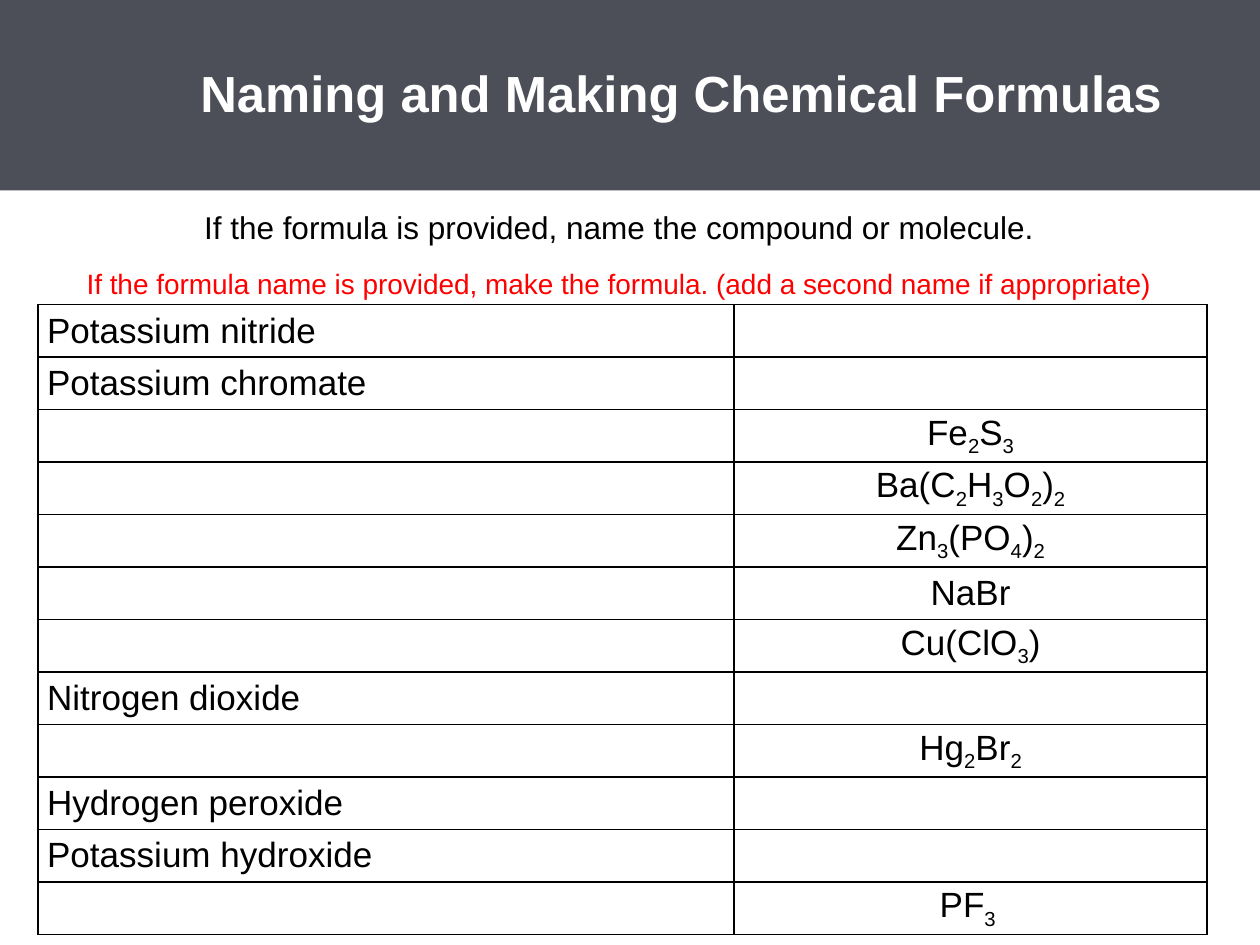
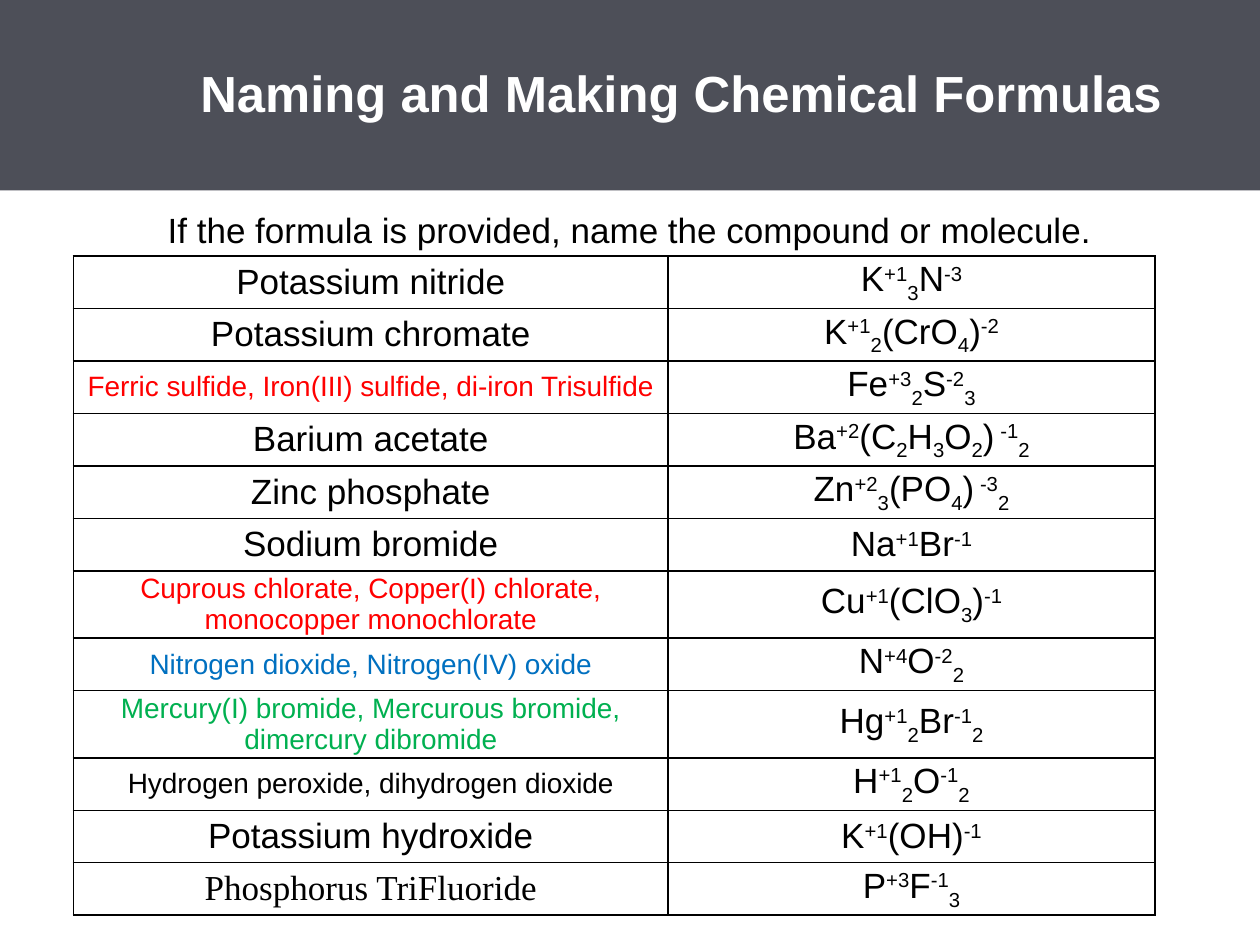
from dataclasses import dataclass

from lxml import etree
from pptx import Presentation
from pptx.dml.color import RGBColor
from pptx.enum.shapes import MSO_SHAPE
from pptx.enum.text import MSO_ANCHOR, PP_ALIGN
from pptx.oxml.ns import qn
from pptx.util import Cm, Pt

RECT = MSO_SHAPE.RECTANGLE
MIDDLE, TOP = MSO_ANCHOR.MIDDLE, MSO_ANCHOR.TOP
LEFT, CENTER = PP_ALIGN.LEFT, PP_ALIGN.CENTER


@dataclass(frozen=True)
class Theme:
    """Colours, fonts and type sizes of both slides."""
    band: str = "4D4F58"
    white: str = "FFFFFF"
    black: str = "000000"
    red: str = "FF0000"
    blue: str = "0070C0"
    green: str = "00B050"
    sans: str = "Arial"
    serif: str = "Times New Roman"
    title: int = 29
    large: int = 20
    medium: int = 18
    small: int = 16
    border: int = 1


T = Theme()
WIDTH, HEIGHT, BAND_H = 25.4, 19.05, 3.84
ROW_H = 12.7 / 12
TITLE = "Naming and Making Chemical Formulas"
NAME_PROMPT = "If the formula is provided, name the compound or molecule."
FORMULA_PROMPT = ("If the formula name is provided, make the formula. "
                  "(add a second name if appropriate)")
BASELINES = {"_": "-25000", "^": "30000"}
SMALL = {"size": T.small}
RED, BLUE, GREEN = ({**SMALL, "color": c} for c in (T.red, T.blue, T.green))

QUESTIONS = [
    ("Potassium nitride", ""),
    ("Potassium chromate", ""),
    ("", "Fe|_2|S|_3"),
    ("", "Ba(C|_2|H|_3|O|_2|)|_2"),
    ("", "Zn|_3|(PO|_4|)|_2"),
    ("", "NaBr"),
    ("", "Cu(ClO|_3|)"),
    ("Nitrogen dioxide", ""),
    ("", "Hg|_2|Br|_2"),
    ("Hydrogen peroxide", ""),
    ("Potassium hydroxide", ""),
    ("", "PF|_3 "),
]
ANSWERS = [
    ("Potassium nitride", "K|^+1|_3|N|^-3"),
    ("Potassium chromate", "K|^+1|_2|(CrO|_4|)|^-2"),
    ("Ferric sulfide, Iron(III) sulfide, di-iron Trisulfide",
     "Fe|^+3|_2|S|^-2|_3", RED),
    ("Barium acetate", "Ba|^+2|(C|_2|H|_3|O|_2|)|^ -1|_2"),
    ("Zinc phosphate", "Zn|^+2|_3|(PO|_4|)|^ -3|_2"),
    ("Sodium bromide", "Na|^+1|Br|^-1"),
    ("Cuprous chlorate, Copper(I) chlorate, monocopper monochlorate",
     "Cu|^+1|(ClO|_3|)|^-1", RED),
    ("Nitrogen dioxide, Nitrogen(IV) oxide", "N|^+4|O|^-2|_2", BLUE),
    ("Mercury(I) bromide, Mercurous bromide, dimercury dibromide",
     "Hg|^+1|_2|Br|^-1|_2", GREEN),
    ("Hydrogen peroxide, dihydrogen dioxide", "H|^+1|_2|O|^-1|_2", SMALL),
    ("Potassium hydroxide", "K|^+1|(OH)|^-1"),
    ("Phosphorus TriFluoride", "P|^+3|F|^-1|_3", {"name": T.serif}),
]


def set_all(obj, values):
    """Set each attribute of obj from a dict."""
    for key, value in values.items():
        setattr(obj, key, value)


def set_frame(tf, anchor, left, top, right, bottom):
    """Wrap a text frame and set its anchor and insets in cm."""
    set_all(tf, {"word_wrap": True, "vertical_anchor": anchor,
                 "margin_left": Cm(left), "margin_top": Cm(top),
                 "margin_right": Cm(right), "margin_bottom": Cm(bottom)})


def write(p, text, size=T.large, color=T.black, name=T.sans, bold=False):
    """Fill a paragraph; pieces led by _ or ^ are lowered or raised."""
    for piece in text.split("|"):
        r = p.add_run()
        shift = BASELINES.get(piece[:1])
        r.text = piece[1:] if shift else piece
        set_all(r.font, {"size": Pt(size), "name": name, "bold": bold})
        r.font.color.rgb = RGBColor.from_string(color)
        if shift:
            r.font._element.set("baseline", shift)


def add_title_band(s):
    """Draw the dark title band across the top."""
    sp = s.shapes.add_shape(RECT, 0, 0, Cm(WIDTH), Cm(BAND_H))
    sp.shadow.inherit = False
    sp.fill.solid()
    sp.fill.fore_color.rgb = RGBColor.from_string(T.band)
    sp.line.fill.background()
    set_frame(sp.text_frame, MIDDLE, 4.04, 0.38, 0.89, 0.38)
    p = sp.text_frame.paragraphs[0]
    set_all(p, {"alignment": LEFT, "line_spacing": 0.95})
    write(p, TITLE, T.title, T.white, bold=True)


def add_prompts(s, box, prompts):
    """Write centred prompts, given as text and format, in a box."""
    tf = s.shapes.add_textbox(*map(Cm, box)).text_frame
    set_frame(tf, TOP, 0.5, 0.25, 0.94, 0.53)
    for i, (text, fmt) in enumerate(prompts):
        p = tf.add_paragraph() if i else tf.paragraphs[0]
        set_all(p, {"alignment": CENTER, "line_spacing": 1.13,
                    "space_before": Pt(9.4 if i else 0)})
        write(p, text, **fmt)


def add_borders(cell):
    """Draw a thin black line on each side of a cell."""
    tc_pr = cell._tc.get_or_add_tcPr()
    for side in ("lnL", "lnR", "lnT", "lnB"):
        ln = etree.SubElement(tc_pr, qn(f"a:{side}"), w=str(Pt(T.border)))
        fill = etree.SubElement(ln, qn("a:solidFill"))
        etree.SubElement(fill, qn("a:srgbClr"), val=T.black)


def add_formula_table(s, left, top, widths, rows, name_align):
    """Set compound names beside their formulas in a ruled table."""
    tbl = s.shapes.add_table(len(rows), len(widths), Cm(left), Cm(top),
                             Cm(sum(widths)), Cm(ROW_H * len(rows))).table
    set_all(tbl, {"first_row": False, "horz_banding": False})
    for col, width in zip(tbl.columns, widths):
        col.width = Cm(width)
    for row, (name, formula, *fmt) in zip(tbl.rows, rows):
        row.height = Cm(ROW_H)
        name_fmt = fmt[0] if fmt else {}
        parts = ((name, name_align, name_fmt), (formula, CENTER, {}))
        for cell, (text, align, style) in zip(row.cells, parts):
            set_all(cell, {"vertical_anchor": MIDDLE, "margin_left": Cm(0.18),
                           "margin_right": Cm(0.18), "margin_top": 0,
                           "margin_bottom": 0})
            add_borders(cell)
            cell.fill.background()
            if text:
                p = cell.text_frame.paragraphs[0]
                p.alignment = align
                write(p, text, **style)


def add_formula_slide(prs, prompt_box, prompts, **table):
    """Add a slide with the title band, prompts and a formula table."""
    s = prs.slides.add_slide(prs.slide_layouts[6])
    add_title_band(s)
    add_prompts(s, prompt_box, prompts)
    add_formula_table(s, **table)


def main():
    """Build and save both slides."""
    prs = Presentation()
    set_all(prs, {"slide_width": Cm(WIDTH), "slide_height": Cm(HEIGHT)})
    add_formula_slide(
        prs, (0, BAND_H, WIDTH, 2.51),
        [(NAME_PROMPT, {"size": T.medium}), (FORMULA_PROMPT, RED)],
        left=0.77, top=6.14, widths=(14.03, 9.53), rows=QUESTIONS,
        name_align=LEFT)
    add_formula_slide(
        prs, (0.43, BAND_H, WIDTH - 0.43, 1.24), [(NAME_PROMPT, {})],
        left=1.48, top=5.16, widths=(11.99, 9.81), rows=ANSWERS,
        name_align=CENTER)
    prs.save("out.pptx")


if __name__ == "__main__":
    main()
